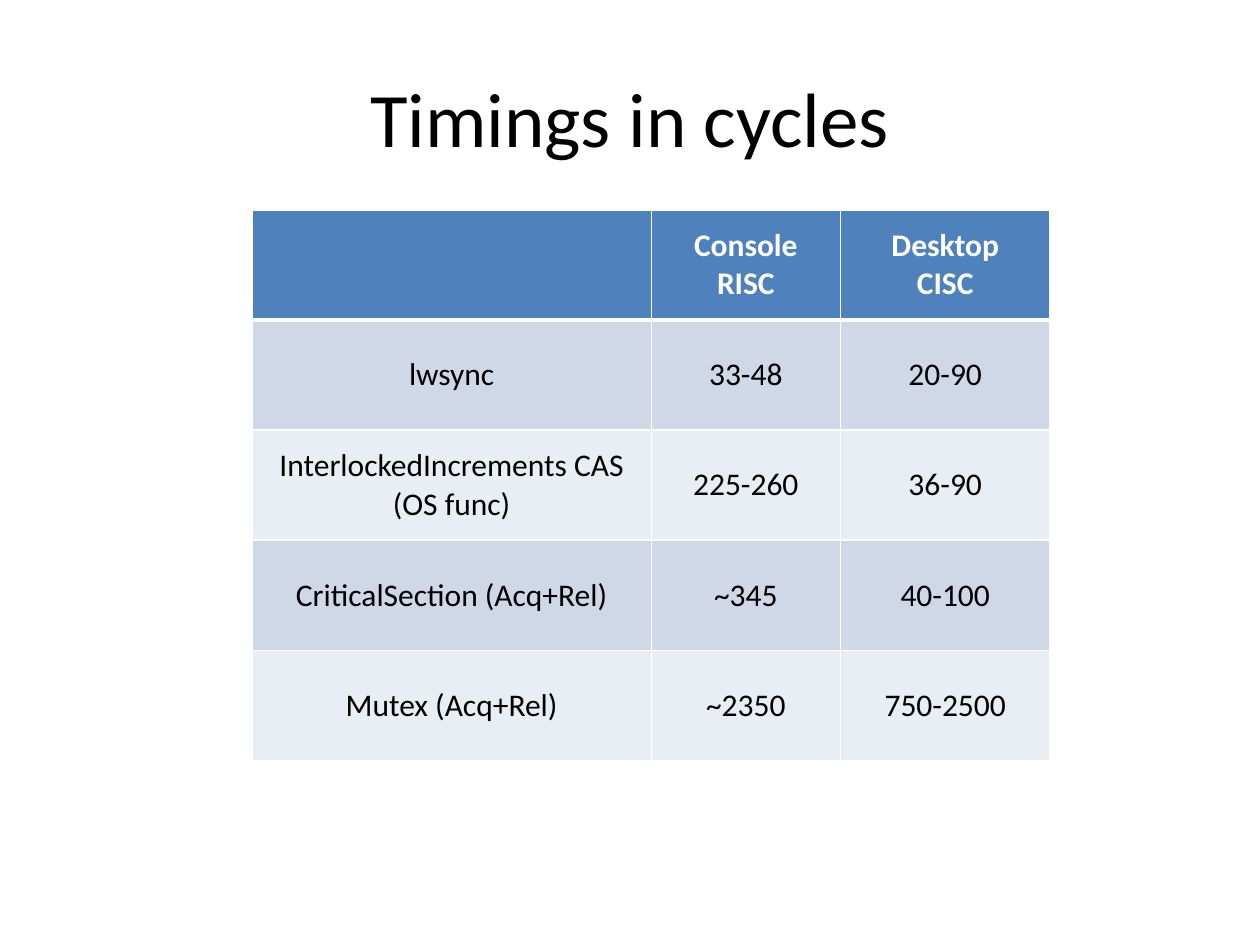
from dataclasses import dataclass

from lxml import etree
from pptx import Presentation
from pptx.dml.color import RGBColor
from pptx.enum.text import MSO_ANCHOR, PP_ALIGN
from pptx.oxml.ns import qn
from pptx.util import Cm, Pt

MIDDLE = MSO_ANCHOR.MIDDLE
CENTER = PP_ALIGN.CENTER
BLANK_LAYOUT = 6


@dataclass(frozen=True)
class Theme:
    font: str = "Calibri"
    title_size: int = 44
    table_size: int = 18
    text: str = "000000"
    header_text: str = "FFFFFF"
    header_fill: str = "4F81BD"
    band_fills: tuple[str, str] = ("D0D8E8", "E9EDF4")
    border: str = "FFFFFF"
    thin_border: int = 1
    thick_border: int = 3


@dataclass(frozen=True)
class TimingRow:
    operation: str
    console: str
    desktop: str


THEME = Theme()
COLUMN_WIDTHS = (Cm(8.05), Cm(3.81), Cm(4.23))
ROW_HEIGHT = Cm(2.22)
ROWS = (
    TimingRow("", "Console\nRISC", "Desktop\nCISC"),
    TimingRow("lwsync", "33-48", "20-90"),
    TimingRow("InterlockedIncrements CAS\n(OS func)", "225-260", "36-90"),
    TimingRow("CriticalSection (Acq+Rel)", "~345", "40-100"),
    TimingRow("Mutex (Acq+Rel)", "~2350", "750-2500"),
)


def write_text(text_frame, text: str, size: int, color: str, bold: bool = False) -> None:
    text_frame.text = text
    for paragraph in text_frame.paragraphs:
        paragraph.alignment = CENTER
        font = paragraph.font
        font.name = THEME.font
        font.size = Pt(size)
        font.bold = bold
        font.color.rgb = RGBColor.from_string(color)


def add_title(slide, text: str) -> None:
    title = slide.shapes.add_textbox(Cm(1.27), Cm(0.76), Cm(22.86), Cm(3.18))
    title.text_frame.word_wrap = True
    title.text_frame.vertical_anchor = MIDDLE
    write_text(title.text_frame, text, THEME.title_size, THEME.text)


def add_borders(cell, row_index: int) -> None:
    """Outline the cell, with a thick rule between header and body."""
    thick_side = {0: "lnB", 1: "lnT"}.get(row_index)
    properties = cell._tc.get_or_add_tcPr()
    for side in ("lnL", "lnR", "lnT", "lnB"):
        width = THEME.thick_border if side == thick_side else THEME.thin_border
        line = etree.SubElement(properties, qn(f"a:{side}"), w=str(Pt(width)))
        fill = etree.SubElement(line, qn("a:solidFill"))
        etree.SubElement(fill, qn("a:srgbClr"), val=THEME.border)


def style_cell(cell, text: str, row_index: int) -> None:
    is_header = row_index == 0
    fill = THEME.header_fill if is_header else THEME.band_fills[(row_index - 1) % 2]
    color = THEME.header_text if is_header else THEME.text
    add_borders(cell, row_index)
    cell.fill.solid()
    cell.fill.fore_color.rgb = RGBColor.from_string(fill)
    cell.vertical_anchor = MIDDLE
    write_text(cell.text_frame, text, THEME.table_size, color, is_header)


def add_timing_table(slide, rows: tuple[TimingRow, ...]) -> None:
    table = slide.shapes.add_table(
        len(rows), len(COLUMN_WIDTHS), Cm(5.08), Cm(4.23),
        sum(COLUMN_WIDTHS), ROW_HEIGHT * len(rows),
    ).table
    for column, width in zip(table.columns, COLUMN_WIDTHS):
        column.width = width
    for row_index, row in enumerate(rows):
        table.rows[row_index].height = ROW_HEIGHT
        texts = (row.operation, row.console, row.desktop)
        for column_index, text in enumerate(texts):
            style_cell(table.cell(row_index, column_index), text, row_index)


def main() -> None:
    presentation = Presentation()
    presentation.slide_width = Cm(25.4)
    presentation.slide_height = Cm(19.05)
    slide = presentation.slides.add_slide(presentation.slide_layouts[BLANK_LAYOUT])
    add_title(slide, "Timings in cycles")
    add_timing_table(slide, ROWS)
    presentation.save("out.pptx")


if __name__ == "__main__":
    main()
